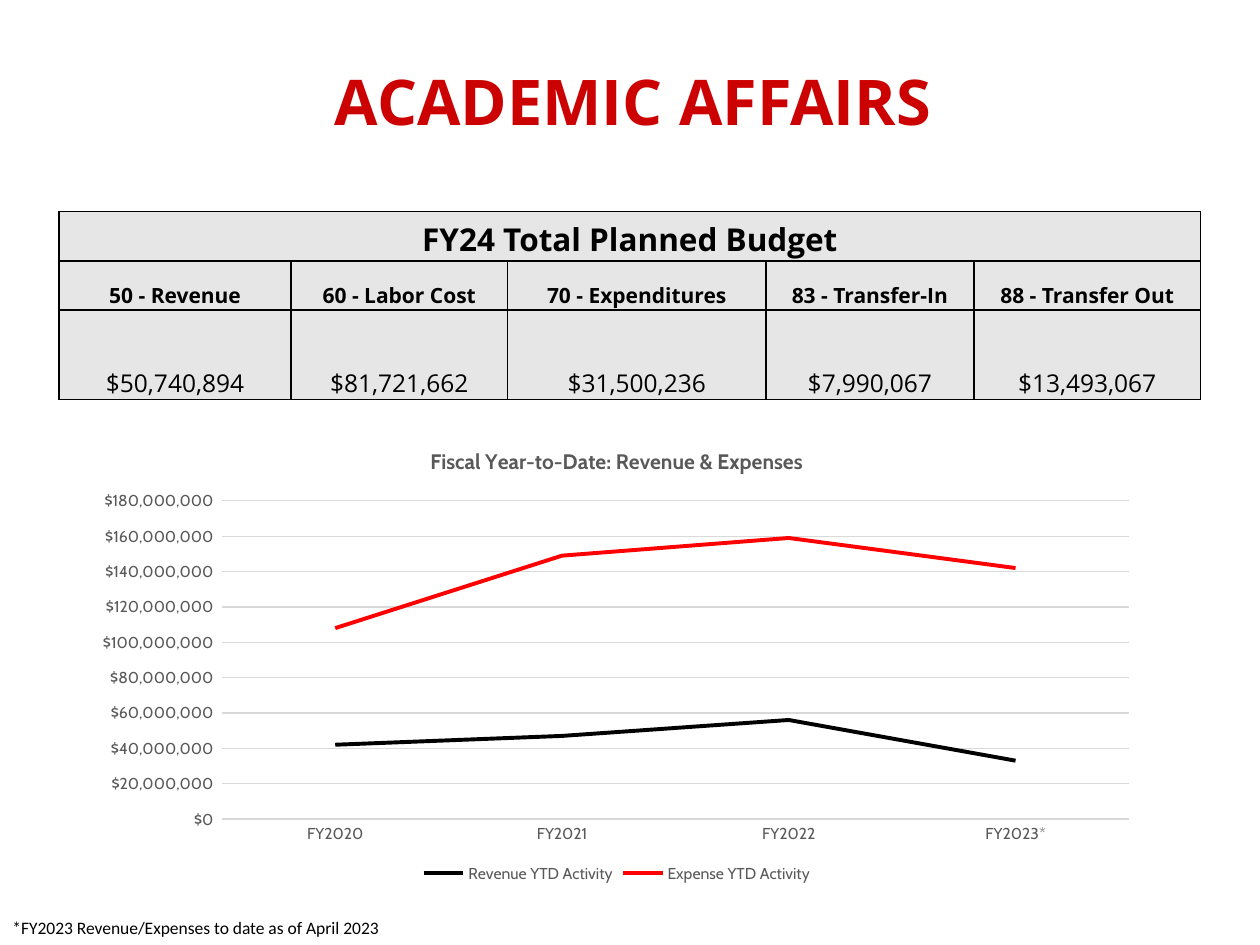
"""Build the Academic Affairs budget slide with a table and a line chart."""
from typing import NamedTuple

from lxml.etree import SubElement
from pptx import Presentation
from pptx.chart.data import CategoryChartData
from pptx.dml.color import RGBColor
from pptx.enum.chart import XL_CHART_TYPE as ChartType
from pptx.enum.chart import XL_LEGEND_POSITION as LegendPosition
from pptx.enum.chart import XL_TICK_MARK as TickMark
from pptx.enum.text import MSO_ANCHOR as Anchor
from pptx.enum.text import PP_ALIGN as Align
from pptx.oxml import parse_xml
from pptx.oxml.ns import nsdecls, qn
from pptx.util import Inches, Pt

BLACK = RGBColor(0x00, 0x00, 0x00)
RED = RGBColor(0xFF, 0x00, 0x00)
TITLE_RED = RGBColor(0xCC, 0x02, 0x02)
CELL_GRAY = RGBColor(0xE6, 0xE6, 0xE6)
TEXT_GRAY = RGBColor(0x59, 0x59, 0x59)
GRID_GRAY = RGBColor(0xD9, 0xD9, 0xD9)


class TextStyle(NamedTuple):
    font: str
    size: float
    color: RGBColor
    bold: bool = False


class Label(NamedTuple):
    text: str
    left: float
    top: float
    width: float
    height: float
    style: TextStyle
    align: Align
    anchor: Anchor
    wrap: bool


class TableRow(NamedTuple):
    height: float
    style: TextStyle
    texts: tuple[str, ...]


class LineSeries(NamedTuple):
    name: str
    values: tuple[int, ...]
    color: RGBColor


LABELS = (
    Label("ACADEMIC AFFAIRS ", 0.78, 0.46, 8.62, 0.67,
          TextStyle("Open Sans", 36, TITLE_RED, True), Align.CENTER, Anchor.MIDDLE, True),
    Label("*FY2023 Revenue/Expenses to date as of April 2023", 0, 7.23, 3.32, 0.27,
          TextStyle("Calibri", 10, BLACK), Align.LEFT, Anchor.TOP, False),
)
COLUMN_WIDTHS = (1.84, 1.72, 2.05, 1.65, 1.8)
BUDGET_ROWS = (
    TableRow(0.39, TextStyle("Open Sans", 18, BLACK, True), ("FY24 Total Planned Budget",)),
    TableRow(0.39, TextStyle("Open Sans", 12, BLACK, True),
             ("50 - Revenue", "60 - Labor Cost", "70 - Expenditures",
              "83 - Transfer-In", "88 - Transfer Out")),
    TableRow(0.71, TextStyle("Open Sans", 14, BLACK),
             ("$50,740,894", "$81,721,662", "$31,500,236", "$7,990,067", "$13,493,067")),
)
YEARS = ("FY2020", "FY2021", "FY2022", "FY2023*")
SERIES = (
    LineSeries("Revenue YTD Activity", (42000000, 47000000, 56000000, 33000000), BLACK),
    LineSeries("Expense YTD Activity", (108000000, 149000000, 159000000, 142000000), RED),
)
AXIS_STYLE = TextStyle("Cabin", 9, TEXT_GRAY)
CHART_TITLE_STYLE = TextStyle("Cabin", 12, TEXT_GRAY, True)
CURRENCY_FORMAT = '"$"#,##0_);[Red]\\("$"#,##0\\)'
PLOT_LAYOUT = {"x": 0.13, "y": 0.16, "w": 0.85, "h": 0.69}


def style_font(font, style: TextStyle) -> None:
    font.name = style.font
    font.size = Pt(style.size)
    font.bold = style.bold
    font.color.rgb = style.color


def style_line(line, color: RGBColor, width: float) -> None:
    line.color.rgb = color
    line.width = Pt(width)


def add_label(slide, label: Label) -> None:
    shape = slide.shapes.add_textbox(
        Inches(label.left), Inches(label.top), Inches(label.width), Inches(label.height))
    frame = shape.text_frame
    frame.word_wrap = label.wrap
    frame.vertical_anchor = label.anchor
    frame.text = label.text
    paragraph = frame.paragraphs[0]
    paragraph.alignment = label.align
    style_font(paragraph.runs[0].font, label.style)


def add_cell_borders(cell) -> None:
    properties = cell._tc.get_or_add_tcPr()
    for side in ("lnL", "lnR", "lnT", "lnB"):
        line = SubElement(properties, qn(f"a:{side}"), w=str(Pt(1)))
        fill = SubElement(line, qn("a:solidFill"))
        SubElement(fill, qn("a:srgbClr"), val=str(BLACK))


def format_cell(cell, text: str, style: TextStyle) -> None:
    add_cell_borders(cell)
    cell.fill.solid()
    cell.fill.fore_color.rgb = CELL_GRAY
    cell.margin_left = cell.margin_right = cell.margin_top = Inches(0.01)
    cell.margin_bottom = 0
    cell.vertical_anchor = Anchor.BOTTOM
    cell.text_frame.text = text
    paragraph = cell.text_frame.paragraphs[0]
    paragraph.alignment = Align.CENTER
    style_font(paragraph.font, style)
    for run in paragraph.runs:
        style_font(run.font, style)


def add_budget_table(slide) -> None:
    table = slide.shapes.add_table(
        len(BUDGET_ROWS), len(COLUMN_WIDTHS), Inches(0.47), Inches(1.68),
        Inches(sum(COLUMN_WIDTHS)), Inches(sum(row.height for row in BUDGET_ROWS))).table
    for column, width in zip(table.columns, COLUMN_WIDTHS):
        column.width = Inches(width)
    for row_index, row in enumerate(BUDGET_ROWS):
        table.rows[row_index].height = Inches(row.height)
        for column_index in range(len(COLUMN_WIDTHS)):
            text = row.texts[column_index] if column_index < len(row.texts) else ""
            format_cell(table.cell(row_index, column_index), text, row.style)
    table.cell(0, 0).merge(table.cell(0, len(COLUMN_WIDTHS) - 1))


def set_plot_layout(chart) -> None:
    plot_area = chart._chartSpace.chart.plotArea
    for layout in plot_area.findall(qn("c:layout")):
        plot_area.remove(layout)
    modes = '<c:xMode val="edge"/><c:yMode val="edge"/>'
    sizes = "".join(f'<c:{key} val="{value}"/>' for key, value in PLOT_LAYOUT.items())
    plot_area.insert(0, parse_xml(
        f'<c:layout {nsdecls("c")}><c:manualLayout><c:layoutTarget val="inner"/>'
        f'{modes}{sizes}</c:manualLayout></c:layout>'))


def add_activity_chart(slide) -> None:
    data = CategoryChartData(number_format=CURRENCY_FORMAT)
    data.categories = YEARS
    for series in SERIES:
        data.add_series(series.name, series.values)
    chart = slide.shapes.add_chart(
        ChartType.LINE, Inches(0.66), Inches(3.39), Inches(8.47), Inches(3.66), data).chart
    style_font(chart.font, TextStyle("Cabin", 10, BLACK))
    chart.has_title = True
    title = chart.chart_title
    title.include_in_layout = False
    title.text_frame.text = "Fiscal Year-to-Date: Revenue & Expenses"
    style_font(title.text_frame.paragraphs[0].runs[0].font, CHART_TITLE_STYLE)
    chart.has_legend = True
    chart.legend.position = LegendPosition.BOTTOM
    chart.legend.include_in_layout = False
    style_font(chart.legend.font, AXIS_STYLE)
    for axis in (chart.category_axis, chart.value_axis):
        axis.major_tick_mark = axis.minor_tick_mark = TickMark.NONE
        style_font(axis.tick_labels.font, AXIS_STYLE)
    style_line(chart.category_axis.format.line, GRID_GRAY, 0.75)
    value_axis = chart.value_axis
    value_axis.minimum_scale, value_axis.maximum_scale = 0, 180000000
    value_axis.major_unit = 20000000
    value_axis.format.line.fill.background()
    style_line(value_axis.major_gridlines.format.line, GRID_GRAY, 0.75)
    value_axis.tick_labels.number_format = CURRENCY_FORMAT
    value_axis.tick_labels.number_format_is_linked = False
    plot = chart.plots[0]
    plot.vary_by_categories = False
    for drawn, series in zip(plot.series, SERIES):
        drawn.smooth = False
        style_line(drawn.format.line, series.color, 2.25)
    set_plot_layout(chart)


def main() -> None:
    presentation = Presentation()
    presentation.slide_width, presentation.slide_height = Inches(10), Inches(7.5)
    slide = presentation.slides.add_slide(presentation.slide_layouts[6])
    add_budget_table(slide)
    add_activity_chart(slide)
    for label in LABELS:
        add_label(slide, label)
    presentation.save("out.pptx")


if __name__ == "__main__":
    main()
